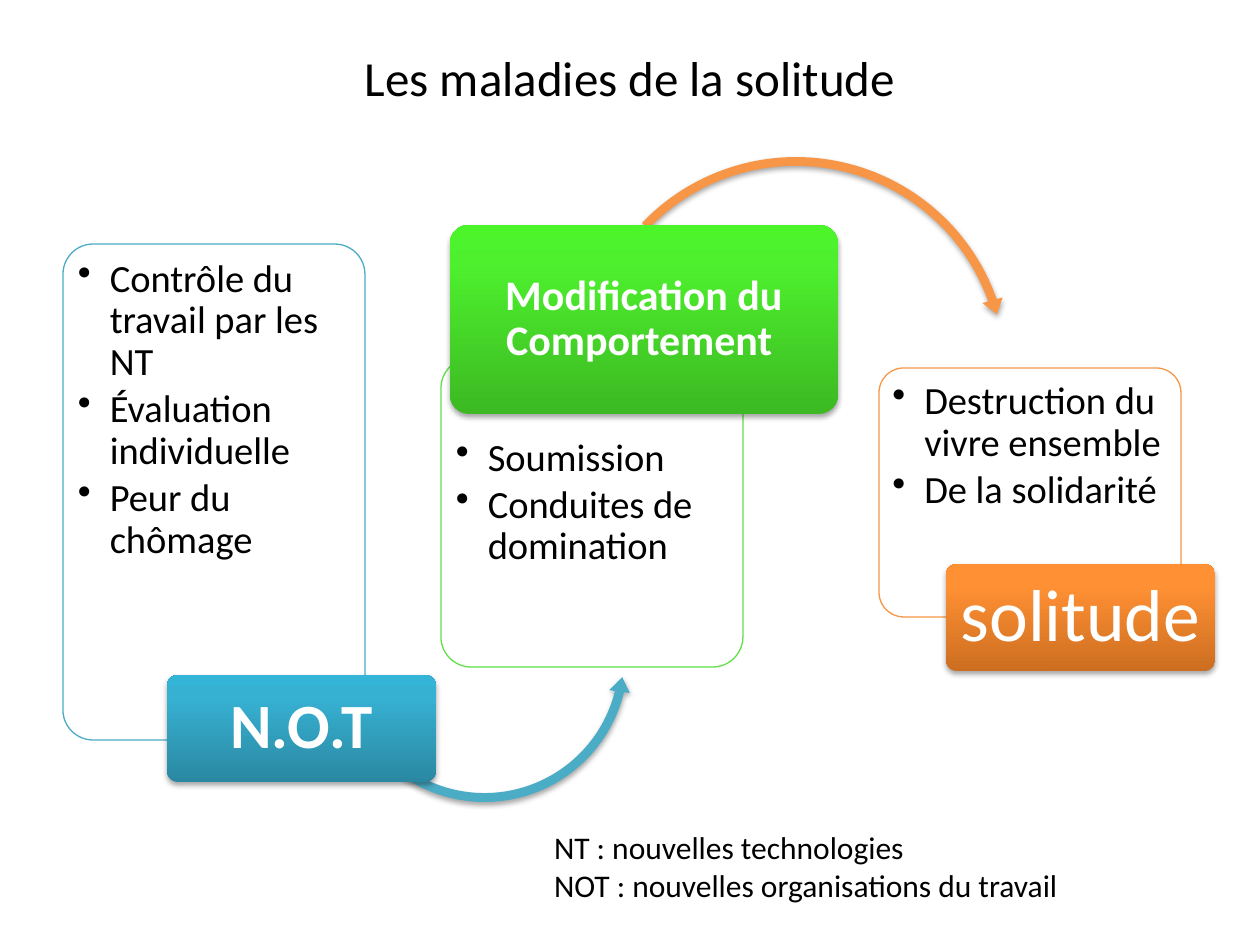
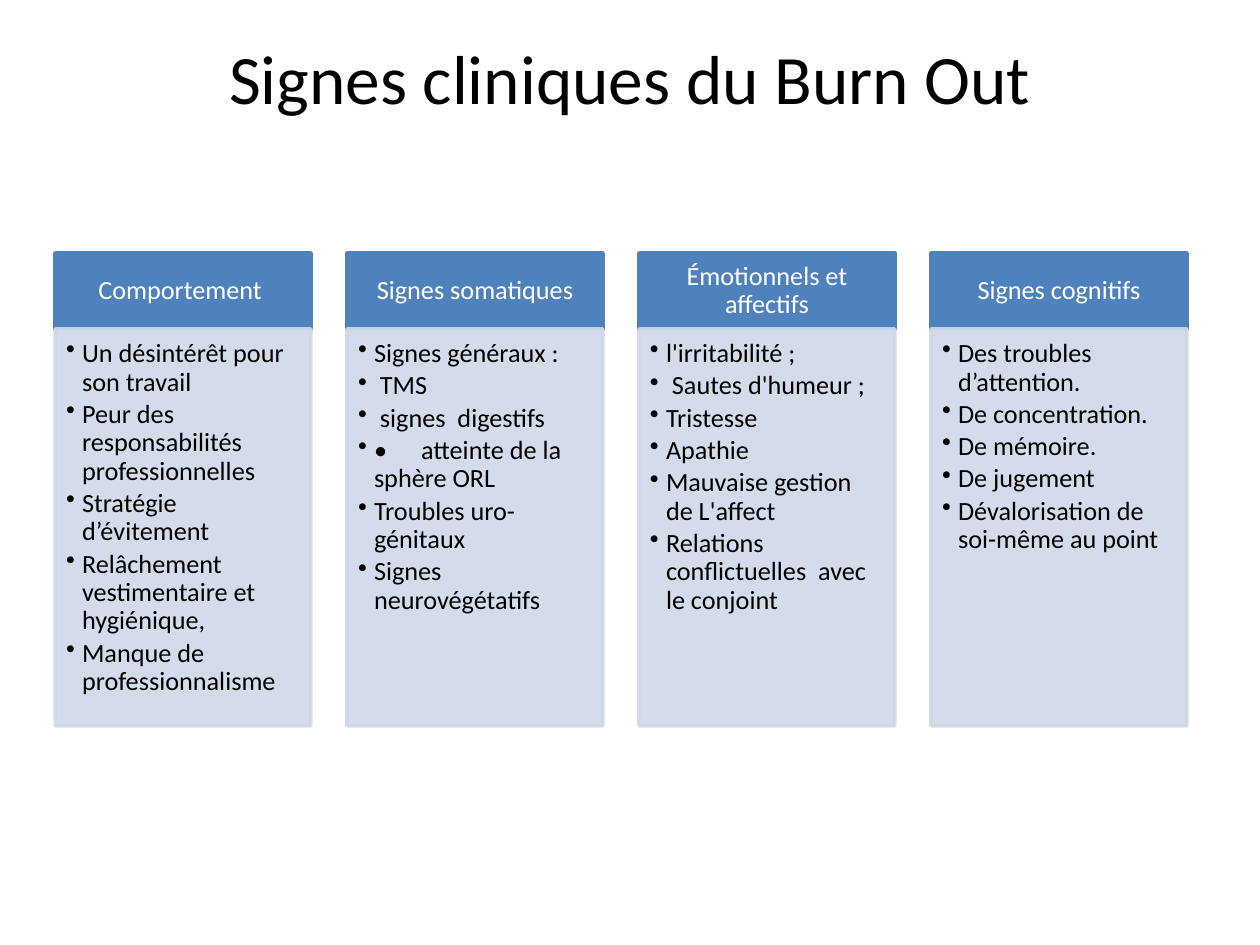
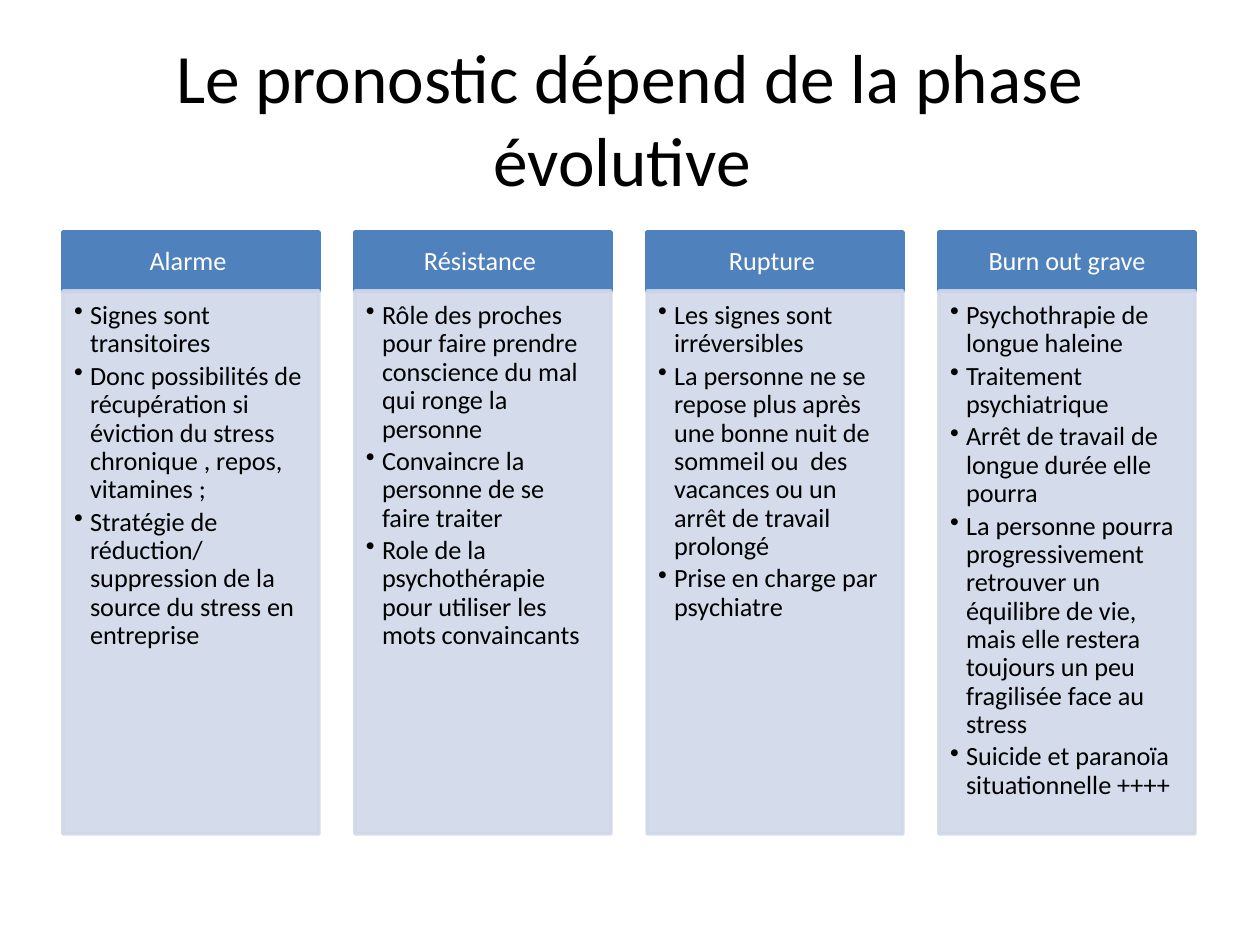
from lxml import etree
from pptx import Presentation
from pptx.dml.color import RGBColor
from pptx.enum.shapes import MSO_SHAPE as Preset
from pptx.enum.text import MSO_ANCHOR as Anchor, PP_ALIGN as Align
from pptx.oxml import parse_xml
from pptx.oxml.ns import nsdecls, qn
from pptx.util import Emu, Pt

PX = 914400 / 126
FONT = "Calibri"
COLORS = {
    "black": "000000", "white": "FFFFFF", "header": "4F81BD", "body": "D0D8E8",
    "teal": "4BACC6", "green": "60E146", "orange": "F79646",
}
GRADIENTS = {
    "teal": ("2A88A2", "37B1D2", "34B4D6"),
    "green": ("3CB923", "4EF02E", "4CF52A"),
    "orange": ("CC6E20", "FF9034", "FF9136"),
}


def write(shape, lines, size, color="black", bold=False, align=Align.LEFT, anchor=Anchor.TOP,
          insets=(13, 6, 13, 6), spacing=None, after=0, indent=0, wrap=True):
    frame = shape.text_frame
    frame.word_wrap = wrap
    frame.vertical_anchor = anchor
    frame.margin_left, frame.margin_top, frame.margin_right, frame.margin_bottom = (
        Emu(round(inset * PX)) for inset in insets)
    for i, line in enumerate(lines):
        paragraph = frame.add_paragraph() if i else frame.paragraphs[0]
        paragraph.alignment = align
        paragraph.line_spacing = spacing
        paragraph.space_after = Pt(size * after)
        run = paragraph.add_run()
        run.text = line
        run.font.name = FONT
        run.font.size = Pt(size)
        run.font.bold = bold
        run.font.color.rgb = RGBColor.from_string(COLORS[color])
        if indent:
            props = paragraph._p.get_or_add_pPr()
            props.set("marL", str(round(indent * PX)))
            props.set("indent", str(round(-indent * PX)))
            etree.SubElement(props, qn("a:buChar")).set("char", "•")


def place(slide, preset, at, fill=None, gradient=None, line=None, weight=0.75,
          fill_alpha=100, line_alpha=100, shadow=False, adjust=()):
    shape = slide.shapes.add_shape(preset, *(Emu(round(v * PX)) for v in at))
    shape.shadow.inherit = False
    for i, value in enumerate(adjust):
        shape.adjustments[i] = value
    props = shape._element.spPr
    if gradient:
        stops = "".join(
            f'<a:gs pos="{pos}000"><a:srgbClr val="{tone}"/></a:gs>'
            for pos, tone in zip((0, 80, 100), GRADIENTS[gradient]))
        props.find(qn("a:prstGeom")).addnext(parse_xml(
            f'<a:gradFill {nsdecls("a")} rotWithShape="1"><a:gsLst>{stops}</a:gsLst>'
            '<a:lin ang="16200000" scaled="0"/></a:gradFill>'))
    else:
        shape.fill.solid()
        shape.fill.fore_color.rgb = RGBColor.from_string(COLORS[fill])
    if line:
        shape.line.color.rgb = RGBColor.from_string(COLORS[line])
        shape.line.width = Pt(weight)
    else:
        shape.line.fill.background()
    for parent, alpha in ((props, fill_alpha), (props.find(qn("a:ln")), line_alpha)):
        if alpha < 100:
            tone = parent.find(qn("a:solidFill")).find(qn("a:srgbClr"))
            etree.SubElement(tone, qn("a:alpha")).set("val", str(alpha * 1000))
    if shadow:
        props.find(qn("a:effectLst")).append(parse_xml(
            f'<a:outerShdw {nsdecls("a")} blurRad="40000" dist="23000" dir="5400000" '
            'rotWithShape="0"><a:srgbClr val="000000"><a:alpha val="35000"/>'
            '</a:srgbClr></a:outerShdw>'))
    return shape


deck = Presentation()
deck.slide_width = Emu(round(1260 * PX))
deck.slide_height = Emu(round(945 * PX))

titles = [
    ("Les maladies de la solitude", 28, 77),
    ("Signes cliniques du Burn Out", 39.6, 77),
    ("Le pronostic dépend de la phase évolutive ", 39.6, 158),
]
slides = []
for title, size, height in titles:
    slide = deck.slides.add_slide(deck.slide_layouts[6])
    heading = slide.shapes.add_textbox(*(Emu(round(v * PX)) for v in (63, 38, 1134, height)))
    write(heading, [title], size, align=Align.CENTER, anchor=Anchor.MIDDLE)
    slides.append(slide)
solitude, signs, prognosis = slides

stages = [
    {
        "color": "teal", "card": (63, 244, 302, 496), "top_inset": 6,
        "points": ["Contrôle du travail par les NT", "Évaluation individuelle", "Peur du chômage"],
        "arrow": (Preset.LEFT_CIRCULAR_ARROW, (335, 509, 299, 299),
                  (0.03, 3.636, 8.267, 77.121, 0.035)),
        "badge": (167, 675, 269, 107), "label": "N.O.T", "size": 36, "bold": True,
        "insets": (9, 6, 9, 6),
    },
    {
        "color": "green", "card": (441, 358, 302, 309), "top_inset": 71,
        "points": ["Soumission", "Conduites de domination"],
        "arrow": (Preset.CIRCULAR_ARROW, (577, 151, 438, 438),
                  (0.02, 2.42, 204.283, 134.213, 0.024)),
        "badge": (450, 225, 388, 189), "label": "Modification du Comportement ",
        "size": 24, "bold": True, "insets": (6, 4, 6, 4),
    },
    {
        "color": "orange", "card": (879, 368, 302, 249), "top_inset": 6,
        "points": ["Destruction du vivre ensemble", "De la solidarité"],
        "arrow": None,
        "badge": (946, 564, 269, 107), "label": "solitude", "size": 42, "bold": False,
        "insets": (11, 8, 11, 8),
    },
]
arrow_colors = ["teal", "orange"]
for i, stage in enumerate(stages):
    card = place(solitude, Preset.ROUNDED_RECTANGLE, stage["card"], fill="white", fill_alpha=90,
                 line=stage["color"], adjust=(0.1,))
    write(card, stage["points"], 22, insets=(6, stage["top_inset"], 6, 6),
          spacing=0.9, after=0.15, indent=32)
    if stage["arrow"]:
        preset, at, bend = stage["arrow"]
        place(solitude, preset, at, fill=arrow_colors[i], shadow=True, adjust=bend)
    badge = place(solitude, Preset.ROUNDED_RECTANGLE, stage["badge"], gradient=stage["color"],
                  shadow=True, adjust=(0.1,))
    write(badge, [stage["label"]], stage["size"], color="white", bold=stage["bold"],
          align=Align.CENTER, anchor=Anchor.MIDDLE, insets=stage["insets"], spacing=0.9)

legend = solitude.shapes.add_textbox(*(Emu(round(v * PX)) for v in (541, 822, 537, 89)))
write(legend, ["NT : nouvelles technologies", "NOT : nouvelles organisations du travail"], 18,
      wrap=False)

sign_columns = {
    "Comportement ": [
        "Un désintérêt pour son travail", "Peur des responsabilités professionnelles",
        "Stratégie d’évitement", "Relâchement  vestimentaire et hygiénique,",
        "Manque de professionnalisme"],
    "Signes somatiques": [
        "Signes généraux :", " TMS", " signes  digestifs", "•\tatteinte de la sphère ORL",
        "Troubles uro-génitaux", "Signes neurovégétatifs"],
    "Émotionnels et affectifs": [
        "l'irritabilité ;", " Sautes d'humeur ;", "Tristesse", "Apathie",
        "Mauvaise gestion de L'affect", "Relations conflictuelles  avec le conjoint"],
    "Signes cognitifs": [
        "Des troubles d’attention.", "De concentration.", "De mémoire.", "De jugement",
        "Dévalorisation de soi-même au point"],
}
phase_columns = {
    "Alarme ": [
        "Signes sont transitoires",
        "Donc possibilités de récupération si éviction du stress chronique , repos, vitamines ;",
        "Stratégie de  réduction/ suppression de la source du stress en entreprise"],
    "Résistance ": [
        "Rôle des proches pour faire prendre conscience du mal qui ronge la personne",
        "Convaincre la personne de se faire traiter",
        "Role de la psychothérapie pour utiliser les mots convaincants"],
    "Rupture ": [
        "Les signes sont irréversibles",
        "La personne ne se repose plus après une bonne nuit de sommeil ou  des vacances "
        "ou un arrêt de travail prolongé",
        "Prise en charge par psychiatre"],
    "Burn out grave": [
        "Psychothrapie de longue haleine", "Traitement psychiatrique",
        "Arrêt de travail de longue durée elle pourra",
        "La personne pourra progressivement retrouver un équilibre de vie, mais elle restera "
        "toujours un peu fragilisée face au stress",
        "Suicide et paranoïa situationnelle ++++"],
}
COLUMN_WIDTH, COLUMN_PITCH = 256, 292
grids = [
    (signs, sign_columns, 55, 253, 76, 397),
    (prognosis, phase_columns, 63, 232, 59, 543),
]
for slide, columns, left, top, header_height, body_height in grids:
    for i, (name, points) in enumerate(columns.items()):
        x = left + i * COLUMN_PITCH
        header = place(slide, Preset.RECTANGLE, (x, top, COLUMN_WIDTH, header_height),
                       fill="header", line="header", weight=2)
        write(header, [name], 15, color="white", align=Align.CENTER, anchor=Anchor.MIDDLE,
              insets=(15, 9, 15, 9), spacing=0.9)
        body = place(slide, Preset.RECTANGLE,
                     (x, top + header_height, COLUMN_WIDTH, body_height),
                     fill="body", fill_alpha=90, line="body", line_alpha=90, weight=2)
        write(body, points, 15, insets=(11, 11, 15, 16), spacing=0.9, after=0.15, indent=16)

deck.save("out.pptx")
